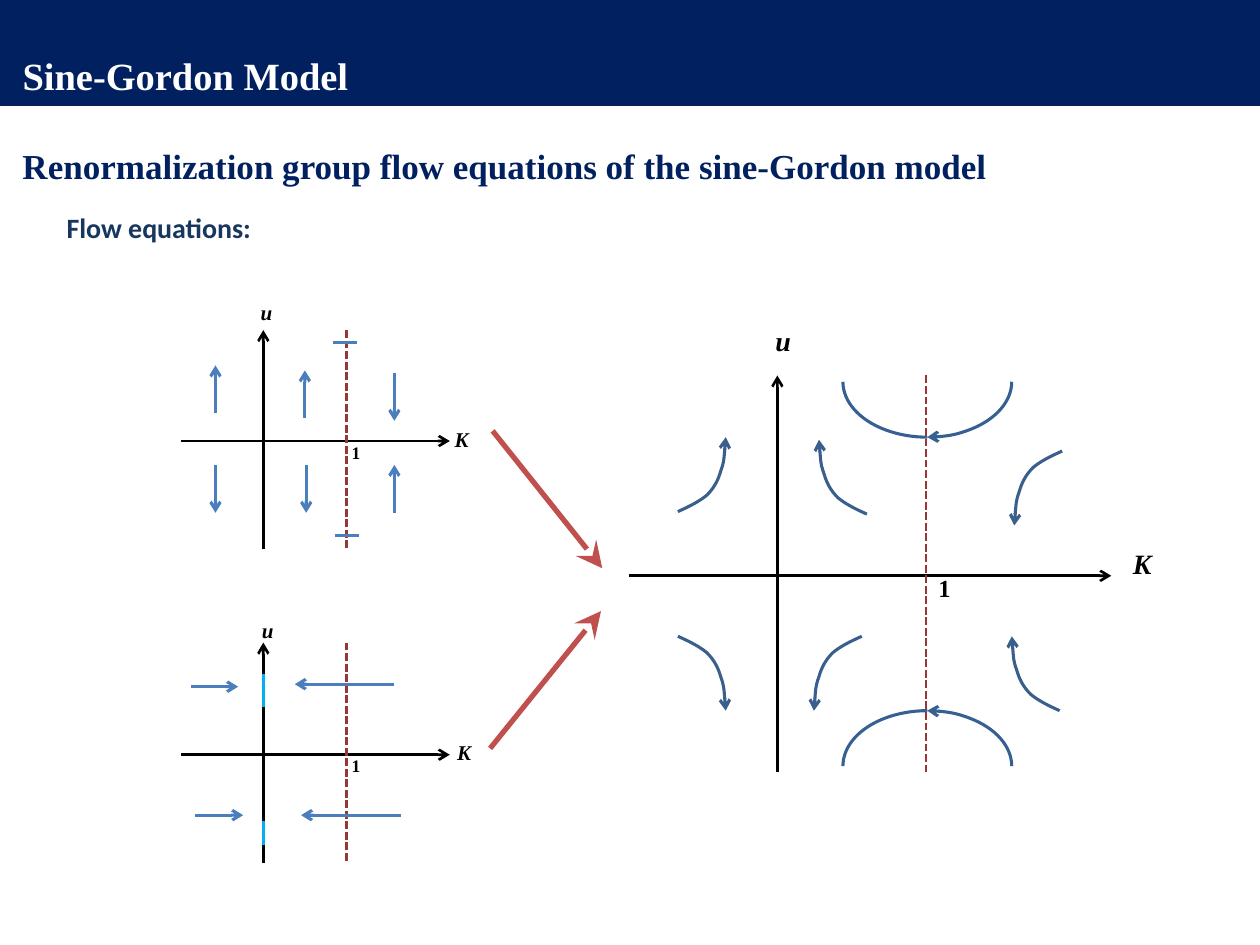
from lxml.etree import SubElement
from pptx import Presentation
from pptx.dml.color import RGBColor
from pptx.enum.dml import MSO_LINE
from pptx.enum.shapes import MSO_CONNECTOR, MSO_SHAPE
from pptx.enum.text import MSO_ANCHOR, PP_ALIGN
from pptx.oxml.ns import qn
from pptx.util import Inches, Pt

NAVY = RGBColor(0x00, 0x20, 0x60)
DARK_BLUE = RGBColor(0x17, 0x37, 0x5E)
WHITE = RGBColor(0xFF, 0xFF, 0xFF)
BLACK = RGBColor(0x00, 0x00, 0x00)
DARK_RED = RGBColor(0x95, 0x37, 0x35)
RED = RGBColor(0xC0, 0x50, 0x4D)
FLOW_BLUE = RGBColor(0x4B, 0x7E, 0xBC)
CURVE_BLUE = RGBColor(0x3A, 0x5F, 0x8C)
ARC_BLUE = RGBColor(0x37, 0x60, 0x92)
CYAN = RGBColor(0x00, 0xB0, 0xF0)
SERIF = "Times New Roman"


def style_line(shape, color, width, head=None, tail=None, dash=None):
    """Format an outline, with arrowheads at its start (head) and end (tail)."""
    shape.line.color.rgb = color
    shape.line.width = Pt(width)
    if dash:
        shape.line.dash_style = dash
    outline = shape.line._get_or_add_ln()
    for tag, arrow in (("a:headEnd", head), ("a:tailEnd", tail)):
        if arrow:
            size = "lg" if arrow == "stealth" else "med"
            SubElement(outline, qn(tag), type=arrow, w=size, len=size)
    SubElement(shape._element.spPr, qn("a:effectLst"))


def add_text(bounds, text, size, color=BLACK, font=SERIF, italic=False, centred=False):
    box = slide.shapes.add_textbox(*map(Inches, bounds))
    box.text_frame.word_wrap = not centred
    box.text_frame.text = text
    para = box.text_frame.paragraphs[0]
    para.alignment = PP_ALIGN.CENTER if centred else PP_ALIGN.LEFT
    span = para.runs[0]
    span.font.name = font
    span.font.size = Pt(size)
    span.font.bold = True
    span.font.italic = italic
    span.font.color.rgb = color


deck = Presentation()
deck.slide_width = Inches(10)
deck.slide_height = Inches(7.5)
slide = deck.slides.add_slide(deck.slide_layouts[5])

# Title band and headings
title = slide.shapes.title
title.left, title.top, title.width, title.height = map(Inches, (0, 0, 10, 0.84))
title.fill.solid()
title.fill.fore_color.rgb = NAVY
title.text_frame.text = "Sine-Gordon Model"
title.text_frame.vertical_anchor = MSO_ANCHOR.BOTTOM
title.text_frame.margin_left = Inches(0.18)
title.text_frame.margin_bottom = Inches(0.06)
title.text_frame.paragraphs[0].alignment = PP_ALIGN.LEFT
title_span = title.text_frame.paragraphs[0].runs[0]
title_span.font.name = SERIF
title_span.font.size = Pt(22)
title_span.font.bold = True
title_span.font.color.rgb = WHITE

add_text((0.08, 1.1, 8.78, 0.44),
         "Renormalization group flow equations of the sine-Gordon model", 20, NAVY)
add_text((0.43, 1.62, 9.69, 0.37), "Flow equations:", 16, DARK_BLUE, "Calibri")

# Axes of the three plots: K axis (left, right, y), u axis (x, top, bottom), x of K = 1
lines = []
for left, right, k_y, u_x, top, bottom, one_x in (
    (4.99, 8.82, 4.57, 6.17, 2.98, 6.13, 7.35),
    (1.44, 3.57, 3.5, 2.09, 2.62, 4.36, 2.75),
    (1.44, 3.57, 5.99, 2.09, 5.1, 6.85, 2.75),
):
    lines += [
        (left, k_y, right, k_y, BLACK, 1.5, "arrow", None),
        (u_x, bottom, u_x, top, BLACK, 1.5, "arrow", None),
        (one_x, top, one_x, bottom, DARK_RED, 1.5, None, MSO_LINE.SQUARE_DOT),
    ]

# Flow of u (upper left plot): arrows above and below the K axis
for x, start, end in (
    (1.71, 3.28, 2.9), (2.42, 3.32, 2.94), (3.13, 2.96, 3.34),
    (1.71, 3.69, 4.07), (2.43, 3.69, 4.07), (3.13, 4.07, 3.69),
):
    lines.append((x, start, x, end, FLOW_BLUE, 1.75, "arrow", None))
for x, y in ((2.64, 2.72), (2.66, 4.25)):
    lines.append((x, y, x + 0.19, y, FLOW_BLUE, 1.75, None, None))

# Flow of K (lower left plot): arrows towards the u axis
for start, end, y in ((3.13, 2.34, 5.43), (1.52, 1.89, 5.45),
                      (3.18, 2.39, 6.47), (1.55, 1.93, 6.47)):
    lines.append((start, y, end, y, FLOW_BLUE, 1.75, "arrow", None))
for top, bottom in ((5.35, 5.61), (6.52, 6.71)):
    lines.append((2.09, top, 2.09, bottom, CYAN, 1.75, None, None))

# Arrows that lead from the small plots to the combined one
lines.append((3.91, 3.42, 4.78, 4.51, RED, 3, "stealth", None))
lines.append((3.89, 5.94, 4.77, 4.85, RED, 3, "stealth", None))

for x1, y1, x2, y2, color, width, arrow, dash in lines:
    connector = slide.shapes.add_connector(
        MSO_CONNECTOR.STRAIGHT, *map(Inches, (x1, y1, x2, y2)))
    style_line(connector, color, width, tail=arrow, dash=dash)

# Axis labels
for bounds, text, size in (
    ((8.82, 4.29, 0.49, 0.46), "K", 16),
    ((5.97, 2.52, 0.49, 0.46), "u", 16),
    ((7.25, 4.5, 0.49, 0.42), "1", 14),
    ((3.51, 3.34, 0.27, 0.3), "K", 12),
    ((1.97, 2.33, 0.27, 0.3), "u", 12),
    ((2.69, 3.46, 0.27, 0.27), "1", 10),
    ((3.53, 5.82, 0.27, 0.3), "K", 12),
    ((1.98, 4.85, 0.27, 0.3), "u", 12),
    ((2.69, 5.94, 0.27, 0.27), "1", 10),
):
    add_text(bounds, text, size, italic=text != "1", centred=True)

# Bent flow arrows: one outline, mirrored through the signs of its two axes.
# Each Bezier has two control points and an end point.
BEZIERS = (
    ((0.09, 0.04), (0.17, 0.08), (0.23, 0.13)),
    ((0.29, 0.19), (0.32, 0.25), (0.34, 0.32)),
    ((0.37, 0.4), (0.38, 0.59), (0.38, 0.59)),
)
for x, y, x_sign, y_sign in (
    (6.88, 4.08, -1, -1), (8.43, 3.58, -1, 1), (5.38, 4.06, 1, -1),
    (5.38, 5.05, 1, 1), (6.84, 5.05, -1, 1), (8.41, 5.64, -1, -1),
):
    beziers = [[(Inches(x + x_sign * dx), Inches(y + y_sign * dy)) for dx, dy in bezier]
               for bezier in BEZIERS]
    builder = slide.shapes.build_freeform(Inches(x), Inches(y))
    builder.add_line_segments([bezier[-1] for bezier in beziers], close=False)
    curve = builder.convert_to_shape()
    # Turn the straight segments into cubic ones
    for segment, bezier in zip(list(curve._element.iter(qn("a:lnTo"))), beziers):
        segment.tag = qn("a:cubicBezTo")
        for index, (point_x, point_y) in enumerate(bezier[:2]):
            control = SubElement(segment, qn("a:pt"), x=str(point_x - curve.left),
                                 y=str(point_y - curve.top))
            segment.insert(index, control)
    curve.fill.background()
    style_line(curve, CURVE_BLUE, 1.75, tail="arrow")

# Quarter arcs that meet on the line K = 1
for top, flip_v in ((2.59, "1"), (5.64, "0")):
    for flip_h, head in (("0", "arrow"), ("1", None)):
        arc = slide.shapes.add_shape(
            MSO_SHAPE.ARC, *map(Inches, (6.69, top, 1.34, 0.88)))
        arc.fill.background()
        arc._element.spPr.xfrm.set("flipH", flip_h)
        arc._element.spPr.xfrm.set("flipV", flip_v)
        style_line(arc, ARC_BLUE, 1.75, head=head)

deck.save("out.pptx")
